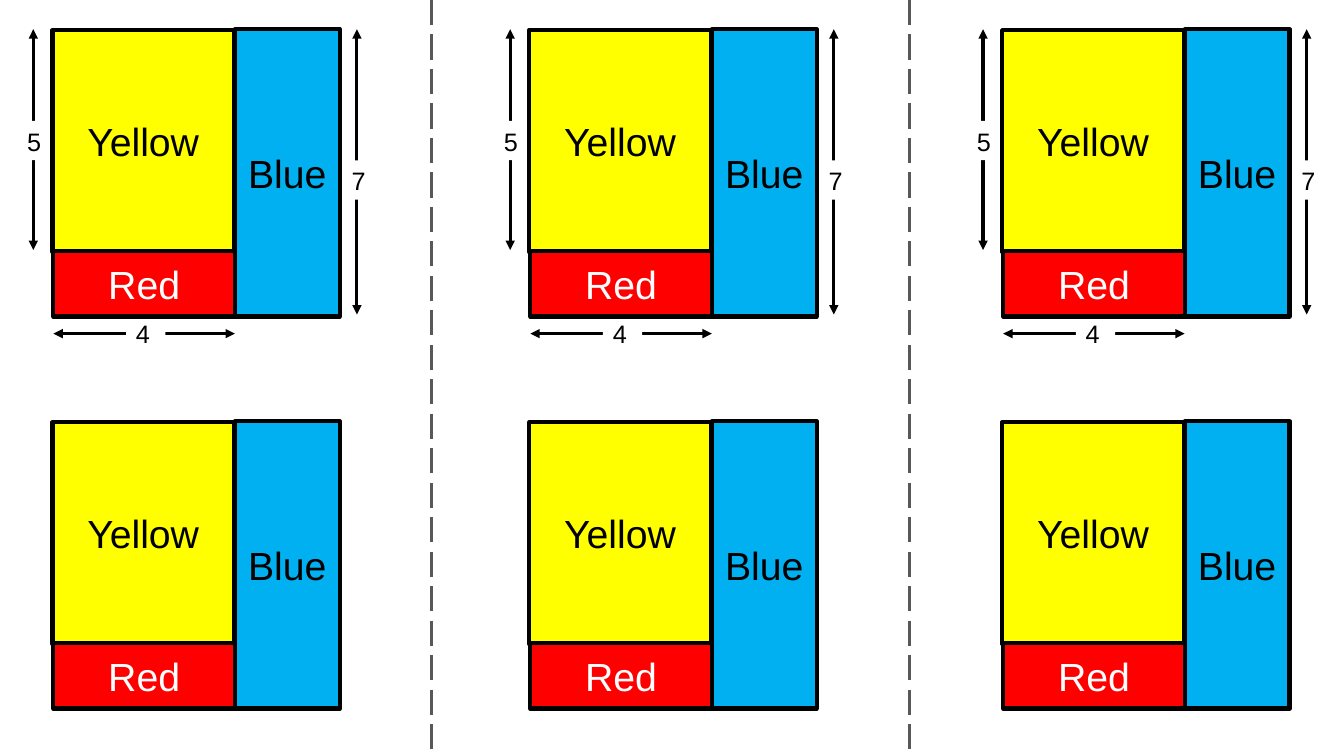
from lxml import etree
from pptx import Presentation
from pptx.dml.color import RGBColor
from pptx.enum.dml import MSO_LINE
from pptx.enum.shapes import MSO_CONNECTOR, MSO_SHAPE
from pptx.enum.text import MSO_ANCHOR, PP_ALIGN
from pptx.oxml.ns import qn
from pptx.util import Pt

RECTANGLE = MSO_SHAPE.RECTANGLE
STRAIGHT = MSO_CONNECTOR.STRAIGHT
LONG_DASH = MSO_LINE.LONG_DASH
CENTER, LEFT = PP_ALIGN.CENTER, PP_ALIGN.LEFT
MIDDLE, TOP = MSO_ANCHOR.MIDDLE, MSO_ANCHOR.TOP

PX = 9144  # 100 px to the inch
WIDTH, HEIGHT = 1333, 750

THEME = {
    "font": "Arial",
    "black": RGBColor(0, 0, 0),
    "white": RGBColor(255, 255, 255),
    "yellow": RGBColor(255, 255, 0),
    "blue": RGBColor(0, 176, 240),
    "red": RGBColor(255, 0, 0),
    "gray": RGBColor(88, 88, 88),
    "panel_size": Pt(28),
    "label_size": Pt(18),
    "border": Pt(3),
    "stroke": Pt(2.25),
}

# Horizontal places are measured from the left edge of each diagram
COLUMNS = [52, 525, 994]
ROWS = [0, 389]
DIVIDERS = [428, 902]
PANELS = [
    ("Yellow", "yellow", "black", (0, 30, 180, 220)),
    ("Blue", "blue", "black", (181, 29, 104, 285)),
    ("Red", "red", "white", (1, 249, 180, 65)),
]
DIMENSIONS = [
    ("4", (181, 331, 1, 331), (73, 311, 39, 39)),
    ("5", (-19, 29, -19, 248), (-35, 120, 30, 39)),
    ("7", (302, 29, 302, 312), (287, 159, 39, 39)),
]


def add_box(text, box, fill, color, size, border, align, anchor):
    shape = slide.shapes.add_shape(RECTANGLE, *(value * PX for value in box))
    shape.shadow.inherit = False
    shape.fill.solid()
    shape.fill.fore_color.rgb = THEME[fill]
    if border:
        shape.line.color.rgb = THEME["black"]
        shape.line.width = THEME["border"]
    else:
        shape.line.fill.background()
    frame = shape.text_frame
    frame.word_wrap = True
    frame.vertical_anchor = anchor
    paragraph = frame.paragraphs[0]
    paragraph.alignment = align
    run = paragraph.add_run()
    run.text = text
    for name, value in {"name": THEME["font"], "size": THEME[size]}.items():
        setattr(run.font, name, value)
    run.font.color.rgb = THEME[color]


def add_line(ends, color):
    connector = slide.shapes.add_connector(STRAIGHT, *(value * PX for value in ends))
    connector.line.color.rgb = THEME[color]
    connector.line.width = THEME["stroke"]
    etree.SubElement(connector._element.spPr, qn("a:effectLst"))
    return connector


presentation = Presentation()
presentation.slide_width = WIDTH * PX
presentation.slide_height = HEIGHT * PX
slide = presentation.slides.add_slide(presentation.slide_layouts[6])

# Dashed dividers between the columns
for x in DIVIDERS:
    add_line((x, 0, x, HEIGHT), "gray").line.dash_style = LONG_DASH

for left in COLUMNS:
    # Dimension arrows and their numbers, on the top diagram only
    for number, (x1, y1, x2, y2), (x, y, width, height) in DIMENSIONS:
        arrow = add_line((left + x1, y1, left + x2, y2), "black")
        outline = arrow.line._get_or_add_ln()
        for end in ("a:headEnd", "a:tailEnd"):
            etree.SubElement(outline, qn(end), type="triangle")
        add_box(number, (left + x, y, width, height), "white", "black",
                "label_size", False, LEFT, TOP)

    # Coloured panels of the top and bottom diagrams
    for top in ROWS:
        for text, fill, color, (x, y, width, height) in PANELS:
            add_box(text, (left + x, top + y, width, height), fill, color,
                    "panel_size", True, CENTER, MIDDLE)

presentation.save("out.pptx")
